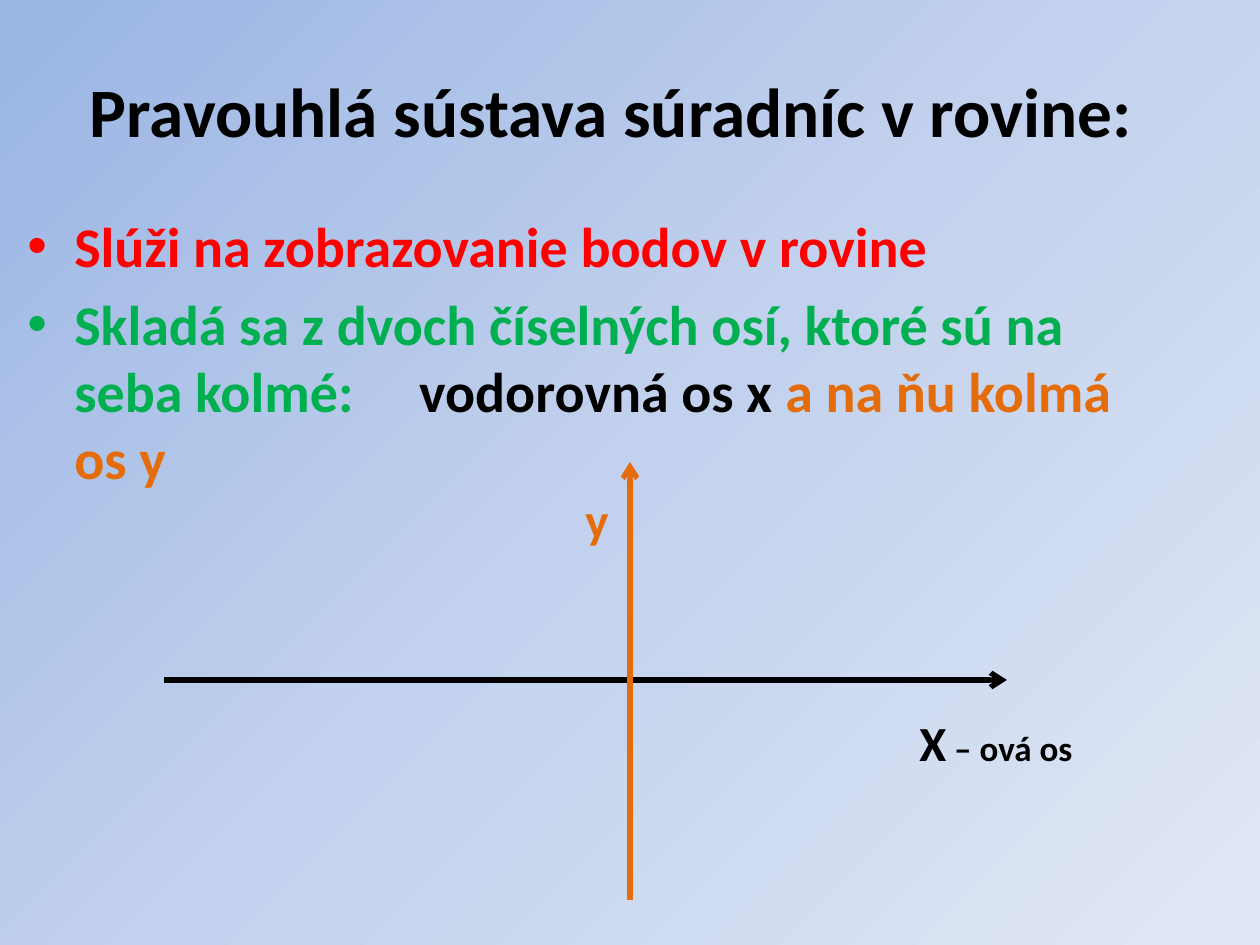
from copy import deepcopy
from pptx import Presentation
from pptx.dml.color import RGBColor
from pptx.enum.shapes import MSO_CONNECTOR
from pptx.enum.text import MSO_ANCHOR, PP_ALIGN
from pptx.oxml.ns import qn
from pptx.util import Pt
from lxml import etree

LINE = MSO_CONNECTOR.STRAIGHT
LEFT, MID = PP_ALIGN.LEFT, PP_ALIGN.CENTER
TOP, CENTER = MSO_ANCHOR.TOP, MSO_ANCHOR.MIDDLE

THEME = {
    "font": "Calibri",
    "black": "000000", "red": "FF0000", "green": "00B050", "orange": "E46C0A",
    "title": 39.6, "body": 32, "label": 28, "small": 20,
    "back": [(0, "9AB5E4"), (0.5, "C2D1ED"), (1, "E1E8F5")],
    "axis": 3, "gap": 6.4, "wide": 30,
}

TITLE = [[("Pravouhlá sústava súradníc v rovine:", "black", "title")]]
POINTS = [
    [("Slúži na zobrazovanie bodov v rovine", "red", "body")],
    [("Skladá sa z dvoch číselných osí, ktoré sú na seba kolmé:", "green", "body"),
     (" ", "green", "body", "wide"),
     ("vodorovná os x ", "black", "body"),
     ("a na ňu kolmá os y", "orange", "body")],
]
LABELS = [
    ((907, 706, 268, 72), [[("X", "black", "label"), (" – ová os", "black", "small")]]),
    ((573, 483, 79, 72), [[("y", "orange", "label")]]),
]
AXES = [((164, 680), (1007, 680), "black"), ((630, 900), (630, 462), "orange")]

PX = 914400 // 126


def px(*nums):
    return [n * PX for n in nums]


def rgb(name):
    return RGBColor.from_string(THEME.get(name, name))


def write(shape, box, paras, align=LEFT, anchor=TOP, bullet=False):
    shape.left, shape.top, shape.width, shape.height = px(*box)
    frame = shape.text_frame
    frame.word_wrap = True
    frame.vertical_anchor = anchor
    for i, runs in enumerate(paras):
        para = frame.add_paragraph() if i else frame.paragraphs[0]
        para.alignment = align
        para.space_before = Pt(THEME["gap"] if i else 0)
        if bullet:
            props = para._p.get_or_add_pPr()
            props.set("marL", str(47 * PX))
            props.set("indent", str(-47 * PX))
            etree.SubElement(props, qn("a:buFont")).set("typeface", "Arial")
            etree.SubElement(props, qn("a:buChar")).set("char", "•")
        for text, color, size, *track in runs:
            run = para.add_run()
            run.text = text
            font = run.font
            font.name, font.size, font.bold = THEME["font"], Pt(THEME[size]), True
            font.color.rgb = rgb(color)
            if track:
                run._r.get_or_add_rPr().set("spc", str(THEME[track[0]] * 100))


def paint(slide):
    fill = slide.background.fill
    fill.gradient()
    fill.gradient_angle = 315
    first = slide._element.find(".//" + qn("a:gs"))
    first.addnext(deepcopy(first))
    for stop, (place, color) in zip(fill.gradient_stops, THEME["back"]):
        stop.position = place
        stop.color.rgb = rgb(color)


def draw(slide, start, end, color):
    axis = slide.shapes.add_connector(LINE, *px(*start, *end))
    axis.line.color.rgb = rgb(color)
    axis.line.width = Pt(THEME["axis"])
    etree.SubElement(axis.line._get_or_add_ln(), qn("a:tailEnd")).set("type", "arrow")
    etree.SubElement(axis._element.spPr, qn("a:effectLst"))


def main():
    deck = Presentation()
    deck.slide_width, deck.slide_height = px(1260, 945)
    slide = deck.slides.add_slide(deck.slide_layouts[5])
    shapes = slide.shapes
    paint(slide)
    write(shapes.title, (44, 60, 1134, 100), TITLE, align=MID, anchor=CENTER)
    write(shapes.add_textbox(0, 0, 0, 0), (15, 205, 1134, 544), POINTS, bullet=True)
    for axis in AXES:
        draw(slide, *axis)
    for box, paras in LABELS:
        write(shapes.add_textbox(0, 0, 0, 0), box, paras)
    deck.save("out.pptx")


if __name__ == "__main__":
    main()
